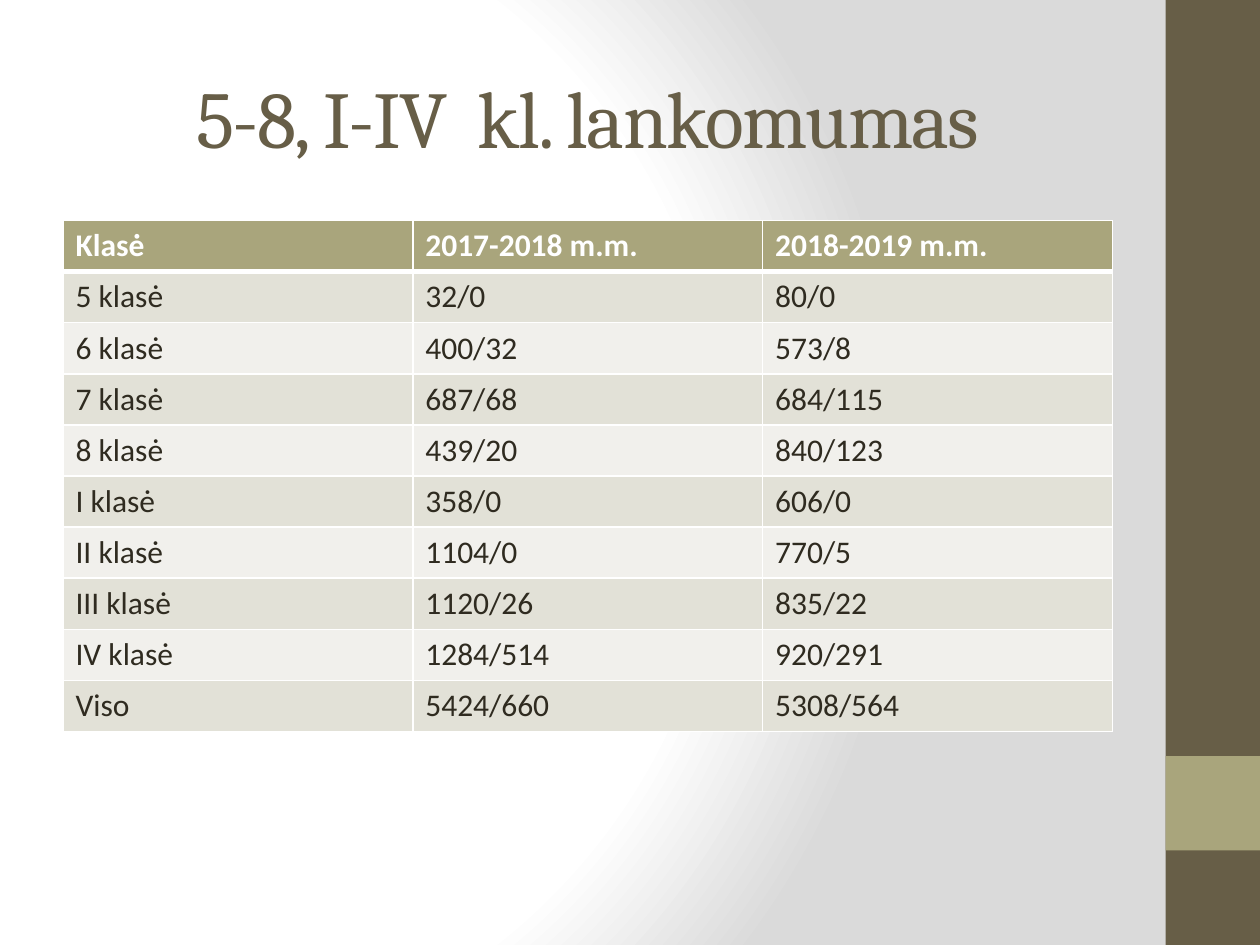
from pptx import Presentation, oxml, util as u
from pptx.dml.color import RGBColor
from pptx.enum import shapes, text
from pptx.oxml.ns import nsdecls

TITLE = "5-8, I-IV  kl. lankomumas"
ATTENDANCE = [
    ("Klasė", "2017-2018 m.m.", "2018-2019 m.m."),
    ("5 klasė", "32/0", "80/0"),
    ("6 klasė", "400/32", "573/8"),
    ("7 klasė", "687/68", "684/115"),
    ("8 klasė", "439/20", "840/123"),
    ("I klasė", "358/0", "606/0"),
    ("II klasė", "1104/0", "770/5"),
    ("III klasė", "1120/26", "835/22"),
    ("IV klasė", "1284/514", "920/291"),
    ("Viso", "5424/660", "5308/564"),
]
COLORS = {
    "white": "FFFFFF", "edge": "DADADA", "brown": "675E47", "olive": "A9A57C",
    "ink": "2F2B20", "odd": "E2E1D7", "even": "F1F0EC",
}
GRADIENT = [(0, "white"), (75, "white"), (100, "edge")]
FORMATS = {
    "title": {"name": "Cambria", "size": u.Pt(46)},
    "header": {"name": "Calibri", "size": u.Pt(18), "bold": True},
    "body": {"name": "Calibri", "size": u.Pt(18), "bold": False},
}
WIDTH, HEIGHT = u.Inches(10), u.Inches(7.5)
BAND = int(WIDTH * 0.075)
LEFT, CONTENT = int(WIDTH * 0.05), int(WIDTH * 0.833)
ROW = u.Inches(0.41)


def rgb(color):
    return RGBColor.from_string(COLORS[color])


def write(para, words, style, color):
    span = para.add_run()
    span.text = words
    for name, value in FORMATS[style].items():
        setattr(span.font, name, value)
    span.font.color.rgb = rgb(color)
    return span


def paint_background(page):
    stops = "".join(
        f'<a:gs pos="{share * 1000}"><a:srgbClr val="{COLORS[color]}"/></a:gs>'
        for share, color in GRADIENT)
    page.element.cSld.insert(0, oxml.parse_xml(
        f'<p:bg {nsdecls("p", "a")}><p:bgPr><a:gradFill rotWithShape="1">'
        f'<a:gsLst>{stops}</a:gsLst><a:path path="circle">'
        '<a:fillToRect l="20000" t="50000" r="100000" b="50000"/></a:path>'
        '</a:gradFill><a:effectLst/></p:bgPr></p:bg>'))


def add_band(page, top, height, color):
    band = page.shapes.add_shape(
        shapes.MSO_SHAPE.RECTANGLE, WIDTH - BAND, top, BAND, height)
    band.shadow.inherit = False
    band.fill.solid()
    band.fill.fore_color.rgb = rgb(color)
    band.line.fill.background()


def add_title(page):
    box = page.shapes.add_textbox(
        LEFT, int(HEIGHT * 0.04), CONTENT, u.Inches(1.25))
    frame = box.text_frame
    frame.word_wrap = True
    frame.vertical_anchor = text.MSO_ANCHOR.MIDDLE
    para = frame.paragraphs[0]
    para.alignment = text.PP_ALIGN.CENTER
    span = write(para, TITLE, "title", "brown")
    span.font._element.set("spc", "-100")


def set_borders(cell, widths):
    """Draw white cell borders; widths are points by side (L, R, T, B)."""
    props = cell._tc.get_or_add_tcPr()
    for place, (side, points) in enumerate(widths.items()):
        props.insert(place, oxml.parse_xml(
            f'<a:ln{side} {nsdecls("a")} w="{u.Pt(points)}"><a:solidFill>'
            f'<a:srgbClr val="{COLORS["white"]}"/></a:solidFill></a:ln{side}>'))


def add_attendance(page):
    rows, columns = len(ATTENDANCE), len(ATTENDANCE[0])
    table = page.shapes.add_table(
        rows, columns, LEFT, u.Inches(1.75), CONTENT, ROW * rows).table
    for row, values in enumerate(ATTENDANCE):
        table.rows[row].height = int(HEIGHT * 0.0541)
        header = row == 0
        style, ink = ("header", "white") if header else ("body", "ink")
        fill = "olive" if header else ("even", "odd")[row % 2]
        borders = {"L": 1, "R": 1, "T": 3 if row == 1 else 1, "B": 3 if header else 1}
        for column, value in enumerate(values):
            cell = table.cell(row, column)
            cell.fill.solid()
            cell.fill.fore_color.rgb = rgb(fill)
            set_borders(cell, borders)
            write(cell.text_frame.paragraphs[0], value, style, ink)


def main():
    deck = Presentation()
    deck.slide_width, deck.slide_height = WIDTH, HEIGHT
    page = deck.slides.add_slide(deck.slide_layouts[6])
    paint_background(page)
    add_band(page, 0, HEIGHT, "brown")
    add_band(page, int(HEIGHT * 0.8), BAND, "olive")
    add_title(page)
    add_attendance(page)
    deck.save("out.pptx")


if __name__ == "__main__":
    main()
